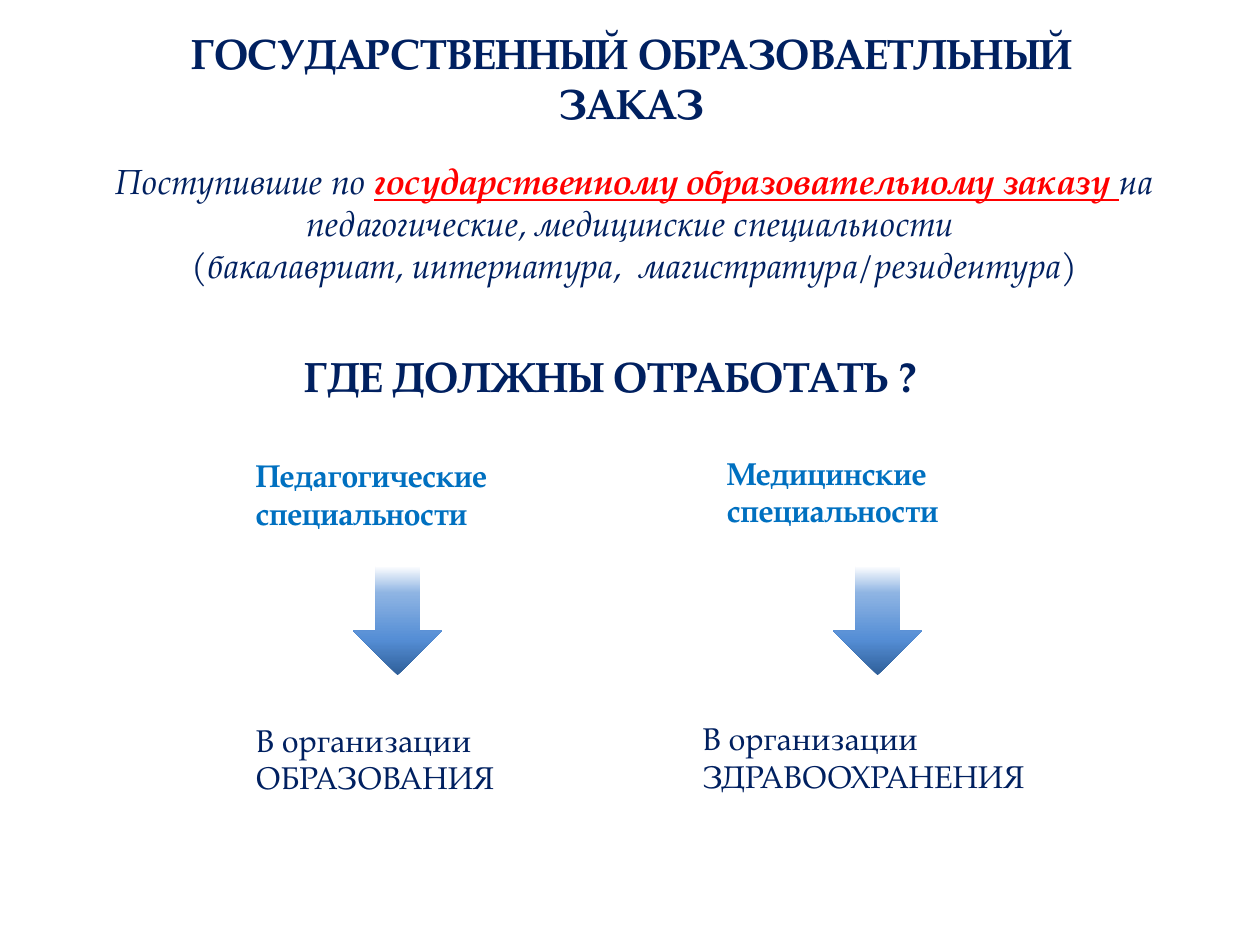
from lxml.etree import SubElement
from pptx import Presentation
from pptx.dml.color import RGBColor
from pptx.enum.shapes import MSO_SHAPE
from pptx.enum.text import MSO_ANCHOR, MSO_AUTO_SIZE, PP_ALIGN
from pptx.oxml.ns import qn
from pptx.util import Pt

# Content
TITLE = "ГОСУДАРСТВЕННЫЙ ОБРАЗОВАЕТЛЬНЫЙ ЗАКАЗ"
INTRO = [  # lines of (text, highlighted)
    [("Поступившие по ", False),
     ("государственному образовательному заказу ", True),
     ("на педагогические, медицинские специальности ", False)],
    [("(бакалавриат, интернатура,  магистратура/резидентура)", False)],
]
QUESTION = "ГДЕ ДОЛЖНЫ ОТРАБОТАТЬ ?"
COLUMNS = [
    {"specialty": "Педагогические специальности", "place": "В организации ОБРАЗОВАНИЯ",
     "centre": 229.7, "arrow_centre": 227.2, "specialty_top": 257, "place_top": 408.2, "place_width": 181.4},
    {"specialty": "Медицинские специальности", "place": "В организации ЗДРАВООХРАНЕНИЯ",
     "centre": 499, "arrow_centre": 501.5, "specialty_top": 255.6, "place_top": 407.5, "place_width": 209.5},
]

THEME = {
    "font": "TeX Gyre Pagella",
    "navy": "002060", "blue": "0070C0", "red": "FF0000",
    "heading": 24, "intro": 20, "label": 18,
    "arrow_stops": [(0, "2F5F99"), (33, "558ED5"), (75, "8EB4E3"), (100, "FFFFFF")],
}
SPECIALTY_WIDTH, LABEL_HEIGHT = 181.4, 51
ARROW_TOP, ARROW_WIDTH, ARROW_HEIGHT = 323.3, 51, 62.6


def style(run, size, color, bold=False, italic=False, underline=False):
    font = run.font
    font.name, font.size = THEME["font"], Pt(THEME[size])
    font.bold, font.italic, font.underline = bold, italic, underline
    font.color.rgb = RGBColor.from_string(THEME[color])


def add_box(slide, left, top, width, height, wrap=True):
    text_frame = slide.shapes.add_textbox(Pt(left), Pt(top), Pt(width), Pt(height)).text_frame
    text_frame.word_wrap = wrap
    text_frame.auto_size = MSO_AUTO_SIZE.SHAPE_TO_FIT_TEXT
    text_frame.paragraphs[0].alignment = PP_ALIGN.CENTER if wrap else PP_ALIGN.LEFT
    return text_frame


def set_text(text_frame, text, size, color, bold=False):
    text_frame.text = text
    style(text_frame.paragraphs[0].runs[0], size, color, bold)


def add_label(slide, text, centre, top, width, color, bold=False):
    text_frame = add_box(slide, centre - width / 2, top, width, LABEL_HEIGHT)
    set_text(text_frame, text, "label", color, bold)


def add_arrow(slide, centre):
    arrow = slide.shapes.add_shape(MSO_SHAPE.DOWN_ARROW, Pt(centre - ARROW_WIDTH / 2),
                                   Pt(ARROW_TOP), Pt(ARROW_WIDTH), Pt(ARROW_HEIGHT))
    arrow.shadow.inherit = False
    arrow.line.fill.background()
    arrow.fill.gradient()
    arrow.fill.gradient_angle = 90  # from the tip upwards
    # Replace the two default stops
    stops = arrow.element.spPr.find(qn("a:gradFill")).find(qn("a:gsLst"))
    for stop in list(stops):
        stops.remove(stop)
    for percent, color in THEME["arrow_stops"]:
        stop = SubElement(stops, qn("a:gs"), pos=str(percent * 1000))
        SubElement(stop, qn("a:srgbClr"), val=color)


def main():
    presentation = Presentation()
    presentation.slide_width, presentation.slide_height = Pt(720), Pt(540)
    slide = presentation.slides.add_slide(presentation.slide_layouts[5])

    # Title
    title = slide.shapes.title
    title.left, title.top, title.width, title.height = Pt(66.2), Pt(11.5), Pt(589.7), Pt(65.5)
    set_text(title.text_frame, TITLE, "heading", "navy", bold=True)
    title.text_frame.word_wrap = True
    title.text_frame.auto_size = MSO_AUTO_SIZE.NONE
    title.text_frame.vertical_anchor = MSO_ANCHOR.MIDDLE
    title.text_frame.paragraphs[0].alignment = PP_ALIGN.CENTER

    # Introduction
    paragraph = add_box(slide, 25.2, 87.8, 674.6, 80).paragraphs[0]
    for number, line in enumerate(INTRO):
        if number:
            paragraph.add_line_break()
        for text, highlighted in line:
            run = paragraph.add_run()
            run.text = text
            style(run, "intro", "red" if highlighted else "navy",
                  bold=highlighted, italic=True, underline=highlighted)

    # Question
    set_text(add_box(slide, 167, 196.6, 396.7, 36, wrap=False), QUESTION, "heading", "navy", bold=True)

    # Specialty, arrow and workplace in each column
    for column in COLUMNS:
        add_label(slide, column["specialty"], column["centre"], column["specialty_top"],
                  SPECIALTY_WIDTH, "blue", bold=True)
        add_arrow(slide, column["arrow_centre"])
        add_label(slide, column["place"], column["centre"], column["place_top"],
                  column["place_width"], "navy")

    presentation.save("out.pptx")


if __name__ == "__main__":
    main()
